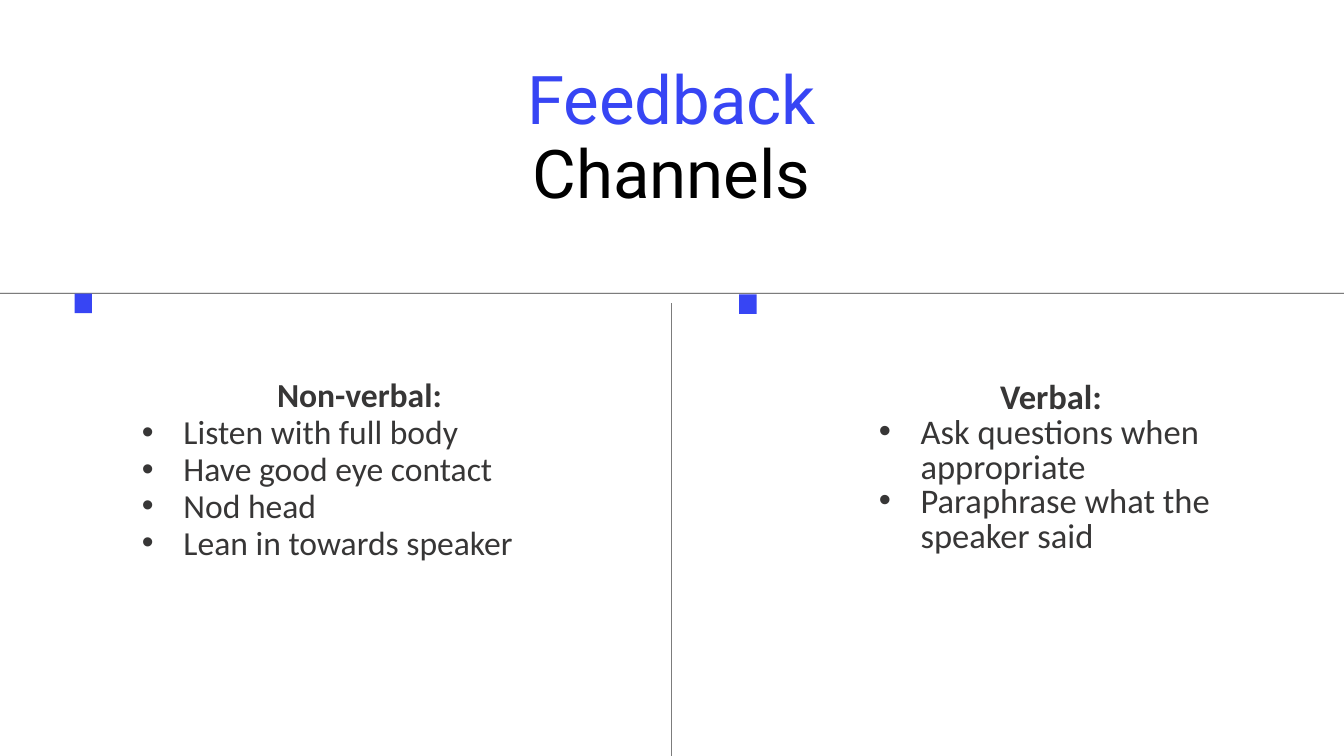
from dataclasses import dataclass

from lxml.etree import SubElement
from pptx import Presentation
from pptx.dml.color import RGBColor
from pptx.enum.shapes import MSO_SHAPE as Shape
from pptx.enum.text import MSO_ANCHOR as Anchor, MSO_AUTO_SIZE as AutoSize, PP_ALIGN as Align
from pptx.oxml.ns import qn
from pptx.util import Pt


@dataclass(frozen=True)
class Theme:
    accent: RGBColor = RGBColor(0x37, 0x45, 0xF4)
    ink: RGBColor = RGBColor(0x37, 0x36, 0x36)
    black: RGBColor = RGBColor(0, 0, 0)
    title_font: str = "Roboto"
    body_font: str = "Calibri"
    title_size: int = 72
    nonverbal_size: int = 36
    verbal_size: int = 37
    hairline: float = 0.72
    bullet_indent: float = 44.64


THEME = Theme()


def prepare_frame(frame):
    frame.word_wrap = True
    frame.auto_size = AutoSize.NONE
    frame.vertical_anchor = Anchor.TOP
    frame.margin_left = frame.margin_top = frame.margin_right = frame.margin_bottom = 0


def add_run(paragraph, text, font, size, color, bold=False):
    run = paragraph.add_run()
    run.text = text
    run.font.name = font
    run.font.size = Pt(size)
    run.font.bold = bold
    run.font.color.rgb = color


def add_block(slide, left, top, width, height, color):
    block = slide.shapes.add_shape(Shape.RECTANGLE, Pt(left), Pt(top), Pt(width), Pt(height))
    block.shadow.inherit = False
    block.fill.solid()
    block.fill.fore_color.rgb = color
    block.line.fill.background()


def add_bullet(paragraph):
    properties = paragraph._p.get_or_add_pPr()
    indent = Pt(THEME.bullet_indent)
    properties.set("marL", str(indent))
    properties.set("indent", str(-indent))
    SubElement(properties, qn("a:buFont"), typeface="Arial")
    SubElement(properties, qn("a:buChar"), char="•")


def place_title(slide, accent_word, plain_word):
    title = slide.shapes.title
    title.left, title.top, title.width, title.height = Pt(275.76), Pt(69.12), Pt(887.76), Pt(239)
    prepare_frame(title.text_frame)
    heading = title.text_frame.paragraphs[0]
    heading.alignment = Align.CENTER
    heading.line_spacing = Pt(79.2)
    add_run(heading, accent_word, THEME.title_font, THEME.title_size, THEME.accent)
    heading.add_line_break()
    add_run(heading, plain_word, THEME.title_font, THEME.title_size, THEME.black)


def add_channel(slide, box, heading, tips, size, spacing):
    frame = slide.shapes.add_textbox(*map(Pt, box)).text_frame
    prepare_frame(frame)
    label = frame.paragraphs[0]
    label.alignment = Align.CENTER
    label.line_spacing = Pt(spacing)
    add_run(label, heading, THEME.body_font, size, THEME.ink, bold=True)
    for tip in tips:
        item = frame.add_paragraph()
        item.alignment = Align.LEFT
        item.line_spacing = Pt(spacing)
        add_bullet(item)
        add_run(item, tip, THEME.body_font, size, THEME.ink)


def main():
    deck = Presentation()
    deck.slide_width, deck.slide_height = Pt(1440), Pt(810)
    slide = deck.slides.add_slide(deck.slide_layouts[5])

    place_title(slide, "Feedback", "Channels")

    # Dividers between the title and the two columns
    add_block(slide, 0, 313.92, 1440, THEME.hairline, THEME.ink)
    add_block(slide, 719.28, 324.72, THEME.hairline, 495.36, THEME.ink)

    # Column markers
    for left, top in ((79.92, 314.64), (792, 315.36)):
        add_block(slide, left, top, 18.72, 20.88, THEME.accent)

    # Feedback channels
    add_channel(
        slide, (151.92, 404.64, 466.56, 282.96), "Non-verbal:",
        ("Listen with full body", "Have good eye contact", "Nod head", "Lean in towards speaker"),
        THEME.nonverbal_size, 39.6,
    )
    add_channel(
        slide, (941.76, 409.68, 377.28, 223.92), "Verbal: ",
        ("Ask questions when appropriate", "Paraphrase what the speaker said"),
        THEME.verbal_size, 37,
    )

    deck.save("out.pptx")


if __name__ == "__main__":
    main()
